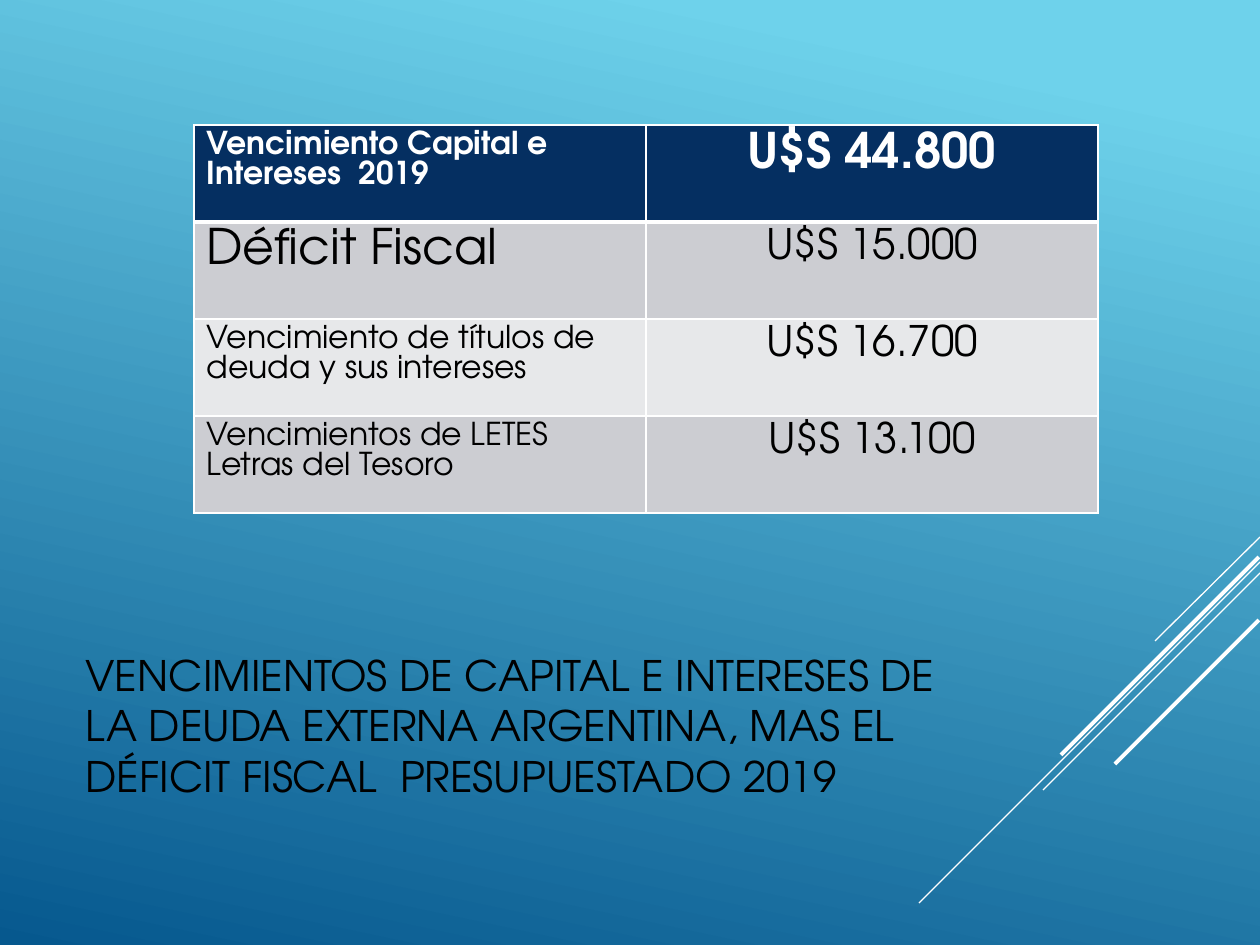
"""Build the slide on Argentine debt maturities and the 2019 fiscal deficit."""
from lxml import etree
from pptx import Presentation
from pptx.dml.color import RGBColor
from pptx.enum.shapes import MSO_CONNECTOR
from pptx.enum.text import MSO_ANCHOR, PP_ALIGN
from pptx.oxml.ns import qn
from pptx.util import Emu, Pt

STRAIGHT = MSO_CONNECTOR.STRAIGHT
MIDDLE = MSO_ANCHOR.MIDDLE
LEFT, CENTER = PP_ALIGN.LEFT, PP_ALIGN.CENTER

FONT = "TeX Gyre Adventor"
WHITE, BLACK = "FFFFFF", "000000"
GRADIENT = [(0.1, "6ED2EB"), (1, "06588E")]
GRADIENT_ANGLE = 258

TITLE = ("VENCIMIENTOS DE CAPITAL E INTERESES DE LA DEUDA EXTERNA ARGENTINA, "
         "MAS EL DÉFICIT FISCAL  PRESUPUESTADO 2019")
TITLE_BOX = (73, 620, 903, 210)

ROWS = [
    ("052F61", ("Vencimiento Capital e Intereses  2019", 18), ("U$S 44.800", 28)),
    ("CCCDD2", ("Déficit Fiscal", 28), ("U$S 15.000", 24)),
    ("E7E8EA", ("Vencimiento de títulos de deuda y sus intereses", 18), ("U$S 16.700", 24)),
    ("CCCDD2", ("Vencimientos de LETES\nLetras del Tesoro", 18), ("U$S 13.100", 24)),
]
TABLE_LEFT, TABLE_TOP = 194, 125
COLUMN_WIDTH, ROW_HEIGHT = 452, 97
TABLE_LEADING, TITLE_LEADING = 0.94, 1.21

DIAGONALS = [
    ((1260, 537), (1155, 641), 0.75),
    ((1260, 562), (919, 903), 0.75),
    ((1260, 573), (1043, 790), 0.75),
    ((1259, 557), (1061, 755), 2.25),
    ((1259, 620), (1115, 764), 2.25),
]


def px(length):
    return Emu(round(length * 914400 / 126))


def color(value):
    return RGBColor.from_string(value)


def write(frame, text, size, ink, leading, align=LEFT, bold=False):
    frame.text = text
    for paragraph in frame.paragraphs:
        paragraph.alignment = align
        paragraph.line_spacing = Pt(round(size * leading, 1))
        paragraph.font.name = FONT
        paragraph.font.size = Pt(size)
        paragraph.font.bold = bold
        paragraph.font.color.rgb = color(ink)


def add_borders(cell, bottom_width):
    properties = cell._tc.get_or_add_tcPr()
    widths = {"a:lnL": 1, "a:lnR": 1, "a:lnT": 1, "a:lnB": bottom_width}
    for index, (tag, width) in enumerate(widths.items()):
        border = etree.Element(qn(tag), w=str(Pt(width)))
        fill = etree.SubElement(border, qn("a:solidFill"))
        etree.SubElement(fill, qn("a:srgbClr"), val=WHITE)
        properties.insert(index, border)


def add_background(slide):
    fill = slide.background.fill
    fill.gradient()
    fill.gradient_angle = GRADIENT_ANGLE
    for stop, (position, value) in zip(fill.gradient_stops, GRADIENT):
        stop.position = position
        stop.color.rgb = color(value)


def add_diagonals(slide):
    for start, end, width in DIAGONALS:
        line = slide.shapes.add_connector(STRAIGHT, *map(px, start + end))
        line.line.color.rgb = color(WHITE)
        line.line.width = Pt(width)
        etree.SubElement(line._element.spPr, qn("a:effectLst"))


def add_title(slide):
    frame = slide.shapes.add_textbox(*map(px, TITLE_BOX)).text_frame
    frame.word_wrap = True
    frame.vertical_anchor = MIDDLE
    write(frame, TITLE, 24, BLACK, TITLE_LEADING)


def add_debt_table(slide):
    box = (TABLE_LEFT, TABLE_TOP, 2 * COLUMN_WIDTH, len(ROWS) * ROW_HEIGHT)
    table = slide.shapes.add_table(len(ROWS), 2, *map(px, box)).table
    table.horz_banding = False
    for column in table.columns:
        column.width = px(COLUMN_WIDTH)
    for row_index, (shade, *entries) in enumerate(ROWS):
        header = row_index == 0
        table.rows[row_index].height = px(ROW_HEIGHT)
        for column_index, (text, size) in enumerate(entries):
            cell = table.cell(row_index, column_index)
            cell.fill.solid()
            cell.fill.fore_color.rgb = color(shade)
            # The header is set off by a thicker rule, shared with the row below.
            add_borders(cell, 3 if header else 1)
            write(cell.text_frame, text, size, WHITE if header else BLACK,
                  TABLE_LEADING, CENTER if column_index else LEFT, header)


def main():
    presentation = Presentation()
    presentation.slide_width, presentation.slide_height = px(1260), px(945)
    slide = presentation.slides.add_slide(presentation.slide_layouts[6])
    add_background(slide)
    add_diagonals(slide)
    add_title(slide)
    add_debt_table(slide)
    presentation.save("out.pptx")


if __name__ == "__main__":
    main()
